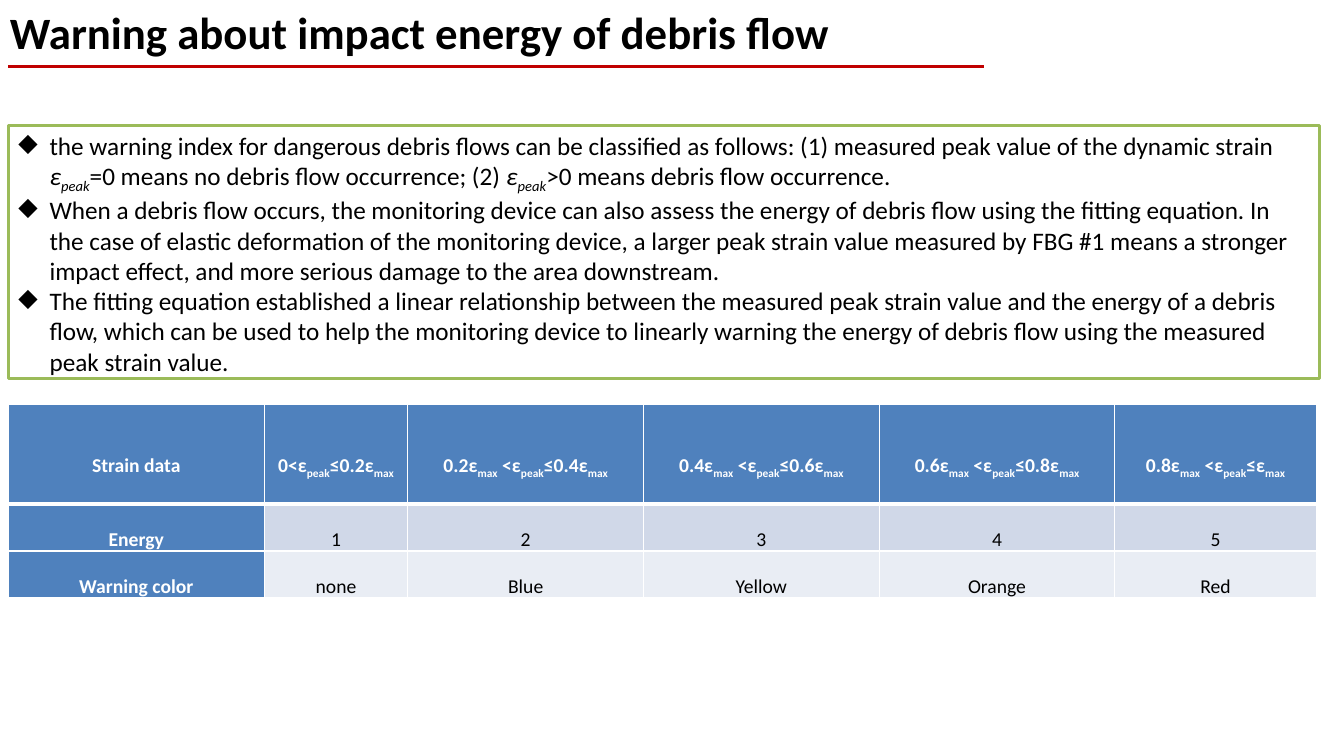
from dataclasses import dataclass

from lxml import etree
from pptx import Presentation
from pptx.dml.color import RGBColor
from pptx.enum.shapes import MSO_CONNECTOR, MSO_SHAPE
from pptx.enum.text import MSO_ANCHOR, MSO_AUTO_SIZE, PP_ALIGN
from pptx.oxml.ns import qn
from pptx.util import Emu, Inches, Pt

STRAIGHT = MSO_CONNECTOR.STRAIGHT
RECTANGLE = MSO_SHAPE.RECTANGLE
MIDDLE, TOP = MSO_ANCHOR.MIDDLE, MSO_ANCHOR.TOP
GROW = MSO_AUTO_SIZE.SHAPE_TO_FIT_TEXT
CENTER, LEFT = PP_ALIGN.CENTER, PP_ALIGN.LEFT


@dataclass(frozen=True)
class Theme:
    font: str = "Calibri"
    ink: str = "000000"
    paper: str = "FFFFFF"
    rule: str = "C00000"
    frame: str = "9BBB59"
    header: str = "4F81BD"
    bands: tuple[str, ...] = ("D0D8E8", "E9EDF4")
    title_size: int = 32
    body_size: int = 18
    table_size: int = 14


@dataclass(frozen=True)
class Run:
    text: str
    sub: bool = False
    italic: bool = False


@dataclass(frozen=True)
class Box:
    """Place in grid columns and rows."""
    column: float
    row: float
    columns: float
    rows: float


THEME = Theme()

# Grid of 160 columns by 90 rows on a 16:9 slide
SLIDE_WIDTH, SLIDE_HEIGHT = Inches(13.33), Inches(7.5)
GRID_COLUMNS, GRID_ROWS = 160, 90
TITLE = Box(0, 0, 110.16, 7.68)
RULE = Box(1, 7.95, 116.1, 0)
FINDINGS = Box(1, 14.9, 156.1, 30.2)
WARNINGS = Box(1, 48.1, 155.7, 23)
WARNING_COLUMNS = (30.46, 17.1, 28.06, 28.06, 28.06, 23.96)
WARNING_ROWS = (11.88, 5.56, 5.56)

# Content
PEAK_STRAIN = [Run("ε", italic=True), Run("peak", sub=True, italic=True)]
FINDING_TEXTS = [
    [Run("the warning index for dangerous debris flows can be classified as follows: "
         "(1) measured peak value of the dynamic strain "),
     *PEAK_STRAIN, Run("=0 means no debris flow occurrence; (2) "),
     *PEAK_STRAIN, Run(">0 means debris flow occurrence.")],
    [Run("When a debris flow occurs, the monitoring device can also assess the energy of "
         "debris flow using the fitting equation. In the case of elastic deformation of the "
         "monitoring device, a larger peak strain value measured by FBG #1 means a stronger "
         "impact effect, and more serious damage to the area downstream.")],
    [Run("The fitting equation established a linear relationship between the measured peak "
         "strain value and the energy of a debris flow, which can be used to help the "
         "monitoring device to linearly warning the energy of debris flow using the measured "
         "peak strain value.")],
]
STRAIN_LIMITS = ("0", "0.2", "0.4", "0.6", "0.8", "")
WARNING_COLORS = ("none", "Blue", "Yellow", "Orange", "Red")


def across(columns: float) -> Emu:
    return Emu(round(SLIDE_WIDTH * columns / GRID_COLUMNS))


def down(rows: float) -> Emu:
    return Emu(round(SLIDE_HEIGHT * rows / GRID_ROWS))


def place(box: Box) -> tuple[Emu, Emu, Emu, Emu]:
    return across(box.column), down(box.row), across(box.columns), down(box.rows)


def rgb(color: str) -> RGBColor:
    return RGBColor.from_string(color)


def strain_range(lower: str, upper: str) -> list[Run]:
    maximum = Run("max", sub=True)
    start = [Run("0<ε")] if lower == "0" else [Run(f"{lower}ε"), maximum, Run(" <ε")]
    return [*start, Run("peak", sub=True), Run(f"≤{upper}ε"), maximum]


def write(paragraph, runs: list[Run], size: int, color: str,
          bold: bool = False, align=LEFT) -> None:
    paragraph.alignment = align
    for part in runs:
        run = paragraph.add_run()
        run.text = part.text
        font = run.font
        font.name, font.size = THEME.font, Pt(size)
        font.bold, font.italic = bold, part.italic
        font.color.rgb = rgb(color)
        if part.sub:
            run.font._element.set("baseline", "-25000")


def add_bullet(paragraph) -> None:
    properties = paragraph._p.get_or_add_pPr()
    indent = Inches(0.31)
    properties.set("marL", str(indent))
    properties.set("indent", str(-indent))
    etree.SubElement(properties, qn("a:buChar")).set("char", "◆")


def set_borders(cell, bottom_width: float) -> None:
    properties = cell._tc.get_or_add_tcPr()
    for side, width in (("L", 1), ("R", 1), ("T", 1), ("B", bottom_width)):
        line = etree.SubElement(properties, qn(f"a:ln{side}"), w=str(Pt(width)))
        fill = etree.SubElement(line, qn("a:solidFill"))
        etree.SubElement(fill, qn("a:srgbClr"), val=THEME.paper)


def draw_title(slide) -> None:
    frame = slide.shapes.add_textbox(*place(TITLE)).text_frame
    frame.word_wrap, frame.auto_size = True, GROW
    write(frame.paragraphs[0], [Run("Warning about impact energy of debris flow")],
          THEME.title_size, THEME.ink, bold=True)


def draw_rule(slide) -> None:
    left, top, width, _ = place(RULE)
    rule = slide.shapes.add_connector(STRAIGHT, left, top, left + width, top)
    rule.line.color.rgb, rule.line.width = rgb(THEME.rule), Pt(2)
    etree.SubElement(rule._element.spPr, qn("a:effectLst"))


def draw_findings(slide) -> None:
    panel = slide.shapes.add_shape(RECTANGLE, *place(FINDINGS))
    panel.shadow.inherit = False
    panel.fill.solid()
    panel.fill.fore_color.rgb = rgb(THEME.paper)
    panel.line.color.rgb, panel.line.width = rgb(THEME.frame), Pt(2)
    frame = panel.text_frame
    frame.word_wrap, frame.auto_size = True, GROW
    frame.vertical_anchor = TOP
    for index, runs in enumerate(FINDING_TEXTS):
        paragraph = frame.add_paragraph() if index else frame.paragraphs[0]
        add_bullet(paragraph)
        write(paragraph, runs, THEME.body_size, THEME.ink)


def draw_warnings(slide) -> None:
    ranges = [strain_range(*limits) for limits in zip(STRAIN_LIMITS, STRAIN_LIMITS[1:])]
    lines = [
        [[Run("Strain data")], *ranges],
        [[Run("Energy")], *([Run(str(level))] for level in range(1, 6))],
        [[Run("Warning color")], *([Run(color)] for color in WARNING_COLORS)],
    ]
    table = slide.shapes.add_table(len(lines), len(lines[0]), *place(WARNINGS)).table
    for column, columns in zip(table.columns, WARNING_COLUMNS):
        column.width = across(columns)
    for row, rows in zip(table.rows, WARNING_ROWS):
        row.height = down(rows)
    for r, line in enumerate(lines):
        for c, runs in enumerate(line):
            heading = r == 0 or c == 0
            cell = table.cell(r, c)
            set_borders(cell, bottom_width=3 if r == 0 else 1)
            cell.fill.solid()
            cell.fill.fore_color.rgb = rgb(THEME.header if heading else THEME.bands[r - 1])
            cell.vertical_anchor = MIDDLE
            cell.margin_left = cell.margin_right = Inches(0.07)
            cell.margin_top = cell.margin_bottom = 0
            paragraph = cell.text_frame.paragraphs[0]
            paragraph.line_spacing = 2.0
            write(paragraph, runs, THEME.table_size,
                  THEME.paper if heading else THEME.ink, bold=heading, align=CENTER)


def main() -> None:
    deck = Presentation()
    deck.slide_width, deck.slide_height = SLIDE_WIDTH, SLIDE_HEIGHT
    slide = deck.slides.add_slide(deck.slide_layouts[6])
    draw_rule(slide)
    draw_title(slide)
    draw_warnings(slide)
    draw_findings(slide)
    deck.save("out.pptx")


if __name__ == "__main__":
    main()
